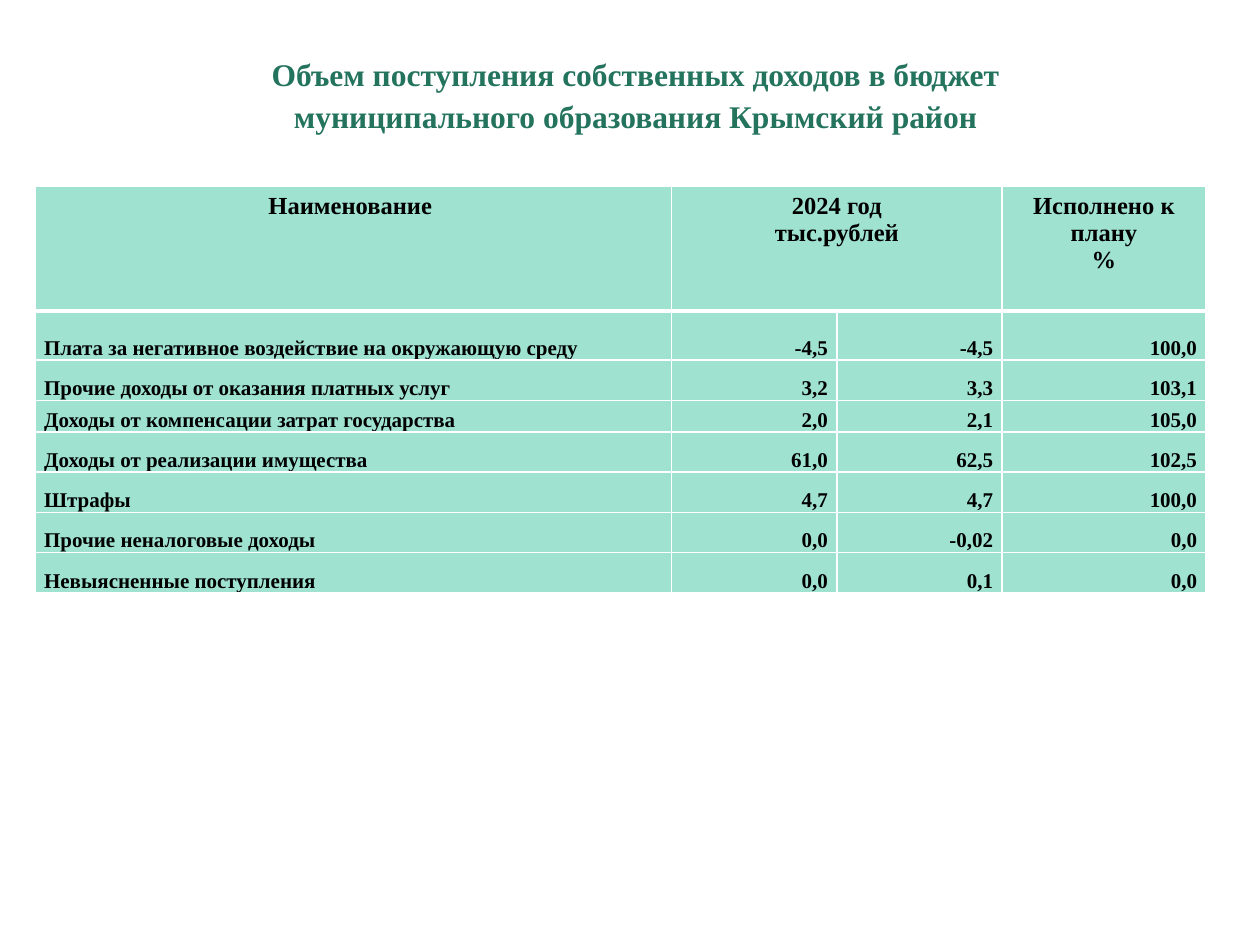
from dataclasses import dataclass

from lxml.etree import SubElement
from pptx import Presentation
from pptx.dml.color import RGBColor as RGB
from pptx.enum.text import MSO_ANCHOR as Anchor, MSO_AUTO_SIZE as Fit, PP_ALIGN as Align
from pptx.oxml.ns import qn
from pptx.util import Cm, Pt


@dataclass(frozen=True)
class Theme:
    font: str = "Times New Roman"
    title: str = "23735D"
    ink: str = "000000"
    fill: str = "9EE2CF"
    line: str = "FFFFFF"
    title_pt: int = 18
    head_pt: int = 14
    body_pt: int = 12


THEME = Theme()

TITLE = ("Объем поступления собственных доходов в бюджет "
         "муниципального образования Крымский район")
HEADS = {0: ["Наименование "], 1: ["2024 год", "тыс.рублей"],
         3: ["Исполнено к плану", "%"]}
ROWS = [
    ("Плата за негативное воздействие на окружающую среду", "-4,5", "-4,5", "100,0"),
    ("Прочие доходы от оказания платных услуг", "3,2", "3,3", "103,1"),
    ("Доходы от компенсации затрат государства", "2,0", "2,1", "105,0"),
    ("Доходы от реализации имущества", "61,0", "62,5", "102,5"),
    ("Штрафы", "4,7", "4,7", "100,0"),
    ("Прочие неналоговые доходы", "0,0", "-0,02", "0,0"),
    ("Невыясненные поступления", "0,0", "0,1", "0,0"),
]
COLS = [12.83, 3.33, 3.33, 4.11]
HIGH = [2.51, 0.99, 0.81, 0.64] + [0.81] * 4


def write(frame, lines, size, color, align):
    """Put one bold run in each paragraph."""
    for i, line in enumerate(lines):
        para = frame.add_paragraph() if i else frame.paragraphs[0]
        para.alignment = align
        run = para.add_run()
        run.text = line
        font = run.font
        font.name, font.size, font.bold = THEME.font, Pt(size), True
        font.color.rgb = RGB.from_string(color)


def edge(cell, base):
    """Draw the cell borders; base is the width of the lower one."""
    props = cell._tc.get_or_add_tcPr()
    for i, (side, width) in enumerate(zip("LRTB", (1, 1, 1, base))):
        line = SubElement(props, qn(f"a:ln{side}"), w=str(Pt(width)))
        props.insert(i, line)
        solid = SubElement(line, qn("a:solidFill"))
        SubElement(solid, qn("a:srgbClr"), val=THEME.line)


def paint(cell, base=1):
    cell.fill.solid()
    cell.fill.fore_color.rgb = RGB.from_string(THEME.fill)
    edge(cell, base)


def add_title(slide, left, top, width, height):
    box = slide.shapes.title
    box.left, box.top, box.width, box.height = map(Cm, (left, top, width, height))
    frame = box.text_frame
    frame.word_wrap = True
    frame.auto_size = Fit.NONE
    frame.vertical_anchor = Anchor.TOP
    write(frame, [TITLE], THEME.title_pt, THEME.title, Align.CENTER)
    frame.paragraphs[0].line_spacing = 1.1


def add_grid(slide, left, top):
    shape = slide.shapes.add_table(len(HIGH), len(COLS), Cm(left), Cm(top),
                                   Cm(sum(COLS)), Cm(sum(HIGH)))
    table = shape.table
    table.horz_banding = False
    for col, width in zip(table.columns, COLS):
        col.width = Cm(width)
    for row, height in zip(table.rows, HIGH):
        row.height = Cm(height)

    # Header row, with the year over two columns
    table.cell(0, 1).merge(table.cell(0, 2))
    for c in range(len(COLS)):
        cell = table.cell(0, c)
        paint(cell, 3)
        if c in HEADS:
            write(cell.text_frame, HEADS[c], THEME.head_pt, THEME.ink, Align.CENTER)

    # Income rows
    for r, row in enumerate(ROWS, 1):
        for c, text in enumerate(row):
            cell = table.cell(r, c)
            paint(cell)
            cell.vertical_anchor = Anchor.BOTTOM
            cell.margin_left = cell.margin_right = Cm(0.18)
            cell.margin_top = cell.margin_bottom = 0
            align = Align.RIGHT if c else Align.JUSTIFY
            write(cell.text_frame, [text], THEME.body_pt, THEME.ink, align)


def main():
    deck = Presentation()
    deck.slide_width, deck.slide_height = Cm(25.4), Cm(19.05)
    slide = deck.slides.add_slide(deck.slide_layouts[5])
    add_title(slide, 3.91, 0.91, 17.81, 2.57)
    add_grid(slide, 0.71, 3.76)
    deck.save("out.pptx")


if __name__ == "__main__":
    main()
